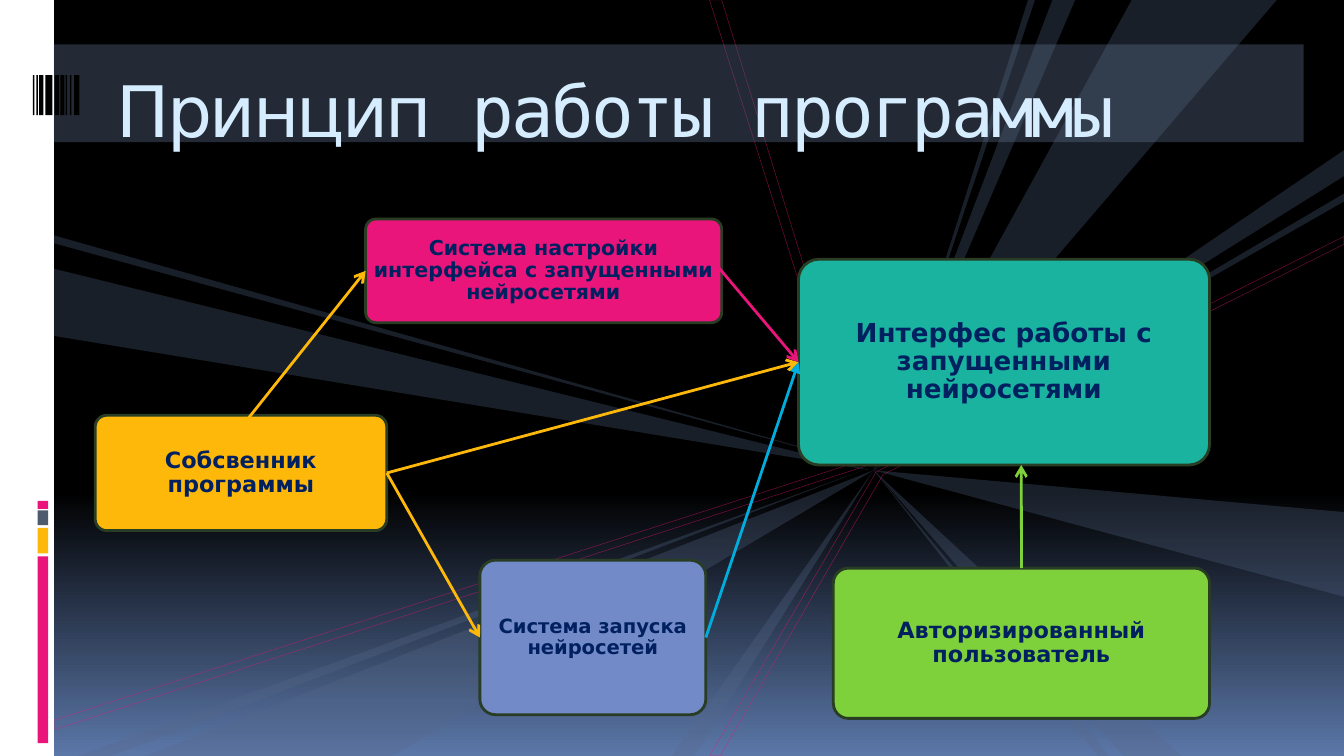
from collections import namedtuple
from dataclasses import dataclass

from lxml import etree
from pptx import Presentation
from pptx.dml.color import RGBColor
from pptx.enum.shapes import MSO_CONNECTOR, MSO_SHAPE
from pptx.enum.text import MSO_ANCHOR, MSO_AUTO_SIZE, PP_ALIGN
from pptx.oxml.ns import qn
from pptx.util import Cm, Pt

RECTANGLE = MSO_SHAPE.RECTANGLE
ROUNDED = MSO_SHAPE.ROUNDED_RECTANGLE
STRAIGHT = MSO_CONNECTOR.STRAIGHT
TOP, LEFT, RIGHT = 0, 1, 3
TITLE_ONLY = 5

Box = namedtuple("Box", "left top width height")  # centimetres


@dataclass(frozen=True)
class Theme:
    black: str = "000000"
    white: str = "FFFFFF"
    horizon: str = "5B77A8"
    ray: str = "566989"
    band: str = "586A86"
    slate: str = "4E5B6F"
    pink: str = "EA157A"
    amber: str = "FEB80A"
    periwinkle: str = "738AC8"
    teal: str = "1AB39F"
    green: str = "7FD13B"
    cyan: str = "00ADDC"
    border: str = "283D23"
    label: str = "002060"
    title: str = "D6ECFF"
    sans: str = "DejaVu Sans"
    mono: str = "DejaVu Sans Mono"
    title_size: float = 38
    large: float = 14
    medium: float = 12
    small: float = 11
    tiny: float = 10.5
    stroke: float = 1.5
    hairline: float = 0.25


THEME = Theme()


def rgb(color):
    return RGBColor.from_string(color)


def set_opacity(shape, percent):
    for color in shape.element.iter(qn("a:srgbClr")):
        etree.SubElement(color, qn("a:alpha"), val=str(percent * 1000))


def add_block(slide, box, color, preset=RECTANGLE):
    block = slide.shapes.add_shape(preset, *map(Cm, box))
    block.shadow.inherit = False
    block.fill.solid()
    block.fill.fore_color.rgb = rgb(color)
    block.line.fill.background()
    return block


def add_polygon(slide, box, points):
    corners = [(Cm(box.left + x), Cm(box.top + y)) for x, y in points]
    builder = slide.shapes.build_freeform(*corners[0])
    builder.add_line_segments(corners[1:], close=True)
    polygon = builder.convert_to_shape()
    polygon.shadow.inherit = False
    return polygon


def paint_background(slide):
    fill = slide.background.fill
    fill.gradient()
    fill.gradient_angle = 270
    for stop, position, color in zip(
        fill.gradient_stops, (0.65, 1), (THEME.black, THEME.horizon)
    ):
        stop.position = position
        stop.color.rgb = rgb(color)


def add_side_strip(slide, box):
    add_block(slide, box, THEME.white)
    for top, height, color in (
        (10.52, 3.53, THEME.pink),
        (9.98, 0.48, THEME.amber),
        (9.65, 0.28, THEME.slate),
        (9.47, 0.15, THEME.pink),
    ):
        add_block(slide, Box(box.left + 0.71, box.top + top, 0.2, height), color)


def add_rays(slide, box):
    """Translucent beams and hairlines that meet right of the middle."""
    right, bottom = box.width, box.height
    outlines = (
        ((13.41, bottom), (16.56, 8.92), (right, 4.47),
         (right, 4.62), (16.69, 8.97), (13.61, bottom)),
        ((1.04, 13.61), (1.04, 13.79), (16.36, 8.81),
         (13.64, 0), (13.41, 0), (16.18, 8.74)),
    )
    for points in outlines:
        outline = add_polygon(slide, box, points)
        outline.fill.background()
        outline.line.color.rgb = rgb(THEME.pink)
        outline.line.width = Pt(THEME.hairline)
        set_opacity(outline, 53)

    focus = (16.51, 8.89)
    beams = (
        ((19.43, 0), (19.56, 0), (16.66, 8.69)),
        ((21.39, 0), (24.13, 0), focus),
        ((right, 9.68), (right, 11.28), focus),
        ((19.89, 0), (20.32, 0), focus),
        ((21.23, bottom), (22.33, bottom), focus),
        ((20.75, bottom), (20.96, bottom), focus),
        ((right, 2.84), (right, 3.33), focus),
        ((right, 3.66), (right, 3.81), focus),
        ((2.74, bottom), (7.42, bottom), focus),
        ((1.47, bottom), (2.11, bottom), (16.31, 8.89)),
        ((1.02, 5.08), (1.02, 6.35), (16.46, 8.89)),
        ((1.02, 4.45), (1.02, 4.6), (16.69, 8.89)),
        ((12.7, bottom), (13.13, bottom), focus),
    )
    for points in beams:
        beam = add_polygon(slide, box, points)
        beam.fill.solid()
        beam.fill.fore_color.rgb = rgb(THEME.ray)
        beam.line.fill.background()
        set_opacity(beam, 30)


def add_barcode(slide, box):
    for offset, width in (
        (0, 0.03), (0.07, 0.03), (0.12, 0.08), (0.24, 0.13), (0.42, 0.08),
        (0.52, 0.08), (0.62, 0.03), (0.7, 0.03), (0.78, 0.1),
    ):
        add_block(slide, Box(box.left + offset, box.top, width, box.height), THEME.black)


def add_title(slide, box):
    set_opacity(add_block(slide, box, THEME.band), 40)
    title = slide.shapes.title
    slide.shapes.element.append(title.element)  # in front of the band
    title.left, title.top = Cm(box.left + 0.94), Cm(box.top + 0.23)
    title.width, title.height = Cm(box.width - 0.96), Cm(1.63)
    frame = title.text_frame
    frame.auto_size = MSO_AUTO_SIZE.NONE
    frame.word_wrap = True
    frame.vertical_anchor = MSO_ANCHOR.TOP
    frame.margin_left = frame.margin_right = Cm(0.25)
    frame.margin_top, frame.margin_bottom = Cm(0.18), Cm(0.13)
    heading = frame.paragraphs[0]
    heading.alignment = PP_ALIGN.LEFT
    heading.font.size = Pt(THEME.title_size)
    heading.font.color.rgb = rgb(THEME.title)
    for words, face in (("Принцип", THEME.sans), (" работы программы", THEME.mono)):
        run = heading.add_run()
        run.text = words
        run.font.name = face
        run.font.size = Pt(THEME.title_size)
        run.font.color.rgb = rgb(THEME.title)
        run.font._element.set("spc", "-150")


def add_node(slide, box, label, color, size):
    node = add_block(slide, box, color, ROUNDED)
    node.adjustments[0] = 0.1
    node.line.color.rgb = rgb(THEME.border)
    node.line.width = Pt(THEME.stroke)
    frame = node.text_frame
    frame.word_wrap = True
    frame.vertical_anchor = MSO_ANCHOR.MIDDLE
    frame.margin_left = frame.margin_right = Cm(0.03)
    frame.margin_top = frame.margin_bottom = Cm(0.03)
    paragraph = frame.paragraphs[0]
    paragraph.text = label
    paragraph.alignment = PP_ALIGN.CENTER
    paragraph.line_spacing = 0.9
    paragraph.font.name = THEME.sans
    paragraph.font.size = Pt(size)
    paragraph.font.bold = True
    paragraph.font.color.rgb = rgb(THEME.label)
    return node


def add_arrow(slide, color, start=(0, 0), end=(0, 0), source=None, target=None,
              head="arrow", glow=False):
    """Source and target are (node, side) pairs that override start and end."""
    arrow = slide.shapes.add_connector(STRAIGHT, *map(Cm, (*start, *end)))
    if source:
        arrow.begin_connect(*source)
    if target:
        arrow.end_connect(*target)
    arrow.line.color.rgb = rgb(color)
    arrow.line.width = Pt(THEME.stroke)
    properties = arrow.element.spPr
    etree.SubElement(properties.find(qn("a:ln")), qn("a:tailEnd"), type=head)
    effects = etree.SubElement(properties, qn("a:effectLst"))
    if glow:
        halo = etree.SubElement(effects, qn("a:glow"), rad=str(Pt(5)))
        halo_color = etree.SubElement(halo, qn("a:srgbClr"), val=color)
        etree.SubElement(halo_color, qn("a:alpha"), val="40000")


def add_diagram(slide, box):
    def place(x, y, width, height):
        return Box(box.left + x, box.top + y, width, height)

    def point(x, y):
        return box.left + x, box.top + y

    owner = add_node(slide, place(0, 3.71, 5.51, 2.18),
                     "Собсвенник программы", THEME.amber, THEME.medium)
    launcher = add_node(slide, place(7.27, 6.45, 4.27, 2.92),
                        "Система запуска нейросетей", THEME.periwinkle, THEME.tiny)
    interface = add_node(slide, place(13.29, 0.76, 7.77, 3.89),
                         "Интерфес работы с запущенными нейросетями",
                         THEME.teal, THEME.large)
    user = add_node(slide, place(13.95, 6.6, 7.11, 2.84),
                    "Авторизированный пользователь", THEME.green, THEME.medium)
    settings = add_node(slide, place(5.11, 0, 6.73, 1.96),
                        "Система настройки интерфейса с запущенными нейросетями",
                        THEME.pink, THEME.small)

    add_arrow(slide, THEME.amber, source=(owner, RIGHT), target=(launcher, LEFT), glow=True)
    add_arrow(slide, THEME.cyan, source=(launcher, RIGHT), target=(interface, LEFT),
              head="triangle", glow=True)
    add_arrow(slide, THEME.green, source=(user, TOP), end=point(17.5, 4.65))
    add_arrow(slide, THEME.amber, start=point(2.7, 4.01), target=(settings, LEFT))
    add_arrow(slide, THEME.amber, source=(owner, RIGHT), target=(interface, LEFT))
    add_arrow(slide, THEME.pink, start=point(11.69, 0.81), target=(interface, LEFT))


def main():
    page = Box(0, 0, 25.4, 14.29)
    presentation = Presentation()
    presentation.slide_width, presentation.slide_height = Cm(page.width), Cm(page.height)
    slide = presentation.slides.add_slide(presentation.slide_layouts[TITLE_ONLY])
    paint_background(slide)
    add_side_strip(slide, Box(0, 0, 1.02, page.height))
    add_rays(slide, page)
    add_title(slide, Box(1.02, 0.84, 23.62, 1.85))
    add_barcode(slide, Box(0.62, 1.42, 0.88, 0.76))
    add_diagram(slide, Box(1.8, 4.14, 21.06, 9.45))
    presentation.save("out.pptx")


if __name__ == "__main__":
    main()
